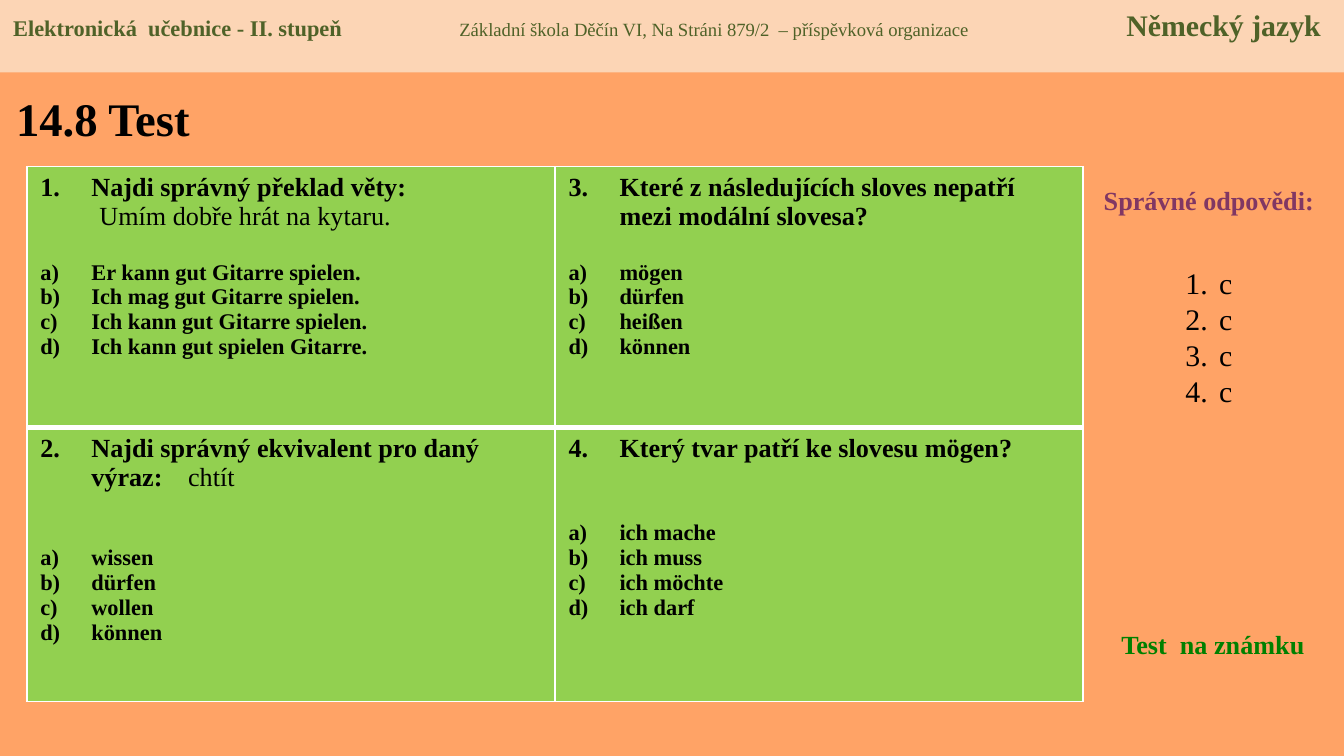
import dataclasses
import typing

import lxml.etree
import pptx
import pptx.dml.color
import pptx.enum.shapes
import pptx.enum.text
import pptx.oxml.ns
import pptx.util

Inches = pptx.util.Inches
Align = pptx.enum.text.PP_ALIGN
Anchor = pptx.enum.text.MSO_ANCHOR


@dataclasses.dataclass(frozen=True)
class Theme:
    font: str = "Times New Roman"
    background: str = "FFA366"
    band: str = "FCD5B5"
    band_text: str = "4F6228"
    cell: str = "92D050"
    border: str = "FFFFFF"
    text: str = "000000"
    answers: str = "813763"
    graded: str = "008000"
    title_size: float = 25
    large: float = 16
    question: float = 14
    option: float = 12
    small: float = 10


@dataclasses.dataclass(frozen=True)
class Question:
    number: int
    prompt: str
    options: tuple[str, ...]
    gap: float  # points between prompt and options
    example: str = ""
    example_inline: bool = False


THEME = Theme()
INDENT = 0.38

# Table rows, read left to right
QUESTIONS = (
    (
        Question(1, "Najdi správný překlad věty:",
                 ("Er kann gut Gitarre spielen.", "Ich mag gut Gitarre spielen.",
                  "Ich kann gut Gitarre spielen.", "Ich kann gut spielen Gitarre."),
                 15.5, "Umím dobře hrát na kytaru."),
        Question(3, "Které z následujících sloves nepatří mezi modální slovesa?",
                 ("mögen", "dürfen", "heißen", "können"), 15.5),
    ),
    (
        Question(2, "Najdi správný ekvivalent pro daný výraz:",
                 ("wissen", "dürfen", "wollen", "können"), 29, "chtít", True),
        Question(4, "Který tvar patří ke slovesu mögen?",
                 ("ich mache", "ich muss", "ich möchte", "ich darf"), 31),
    ),
)


def rgb(color: str) -> pptx.dml.color.RGBColor:
    return pptx.dml.color.RGBColor.from_string(color)


def add_xml(parent: typing.Any, tag: str, **attributes: str) -> typing.Any:
    return lxml.etree.SubElement(parent, pptx.oxml.ns.qn(tag), **attributes)


def style(font: typing.Any, size: float, color: str = THEME.text, bold: bool = True) -> None:
    font.name = THEME.font
    font.size = pptx.util.Pt(size)
    font.bold = bold
    font.color.rgb = rgb(color)


def add_run(p: typing.Any, text: str, size: float, color: str, bold: bool) -> None:
    r = p.add_run()
    r.text = text
    style(r.font, size, color, bold)


def next_paragraph(tf: typing.Any) -> typing.Any:
    """Return the empty first paragraph, or a new one after the last."""
    p = tf.paragraphs[-1]
    return tf.add_paragraph() if p.runs else p


def indent(p: typing.Any, left: float, first: float = 0) -> None:
    pPr = p._p.get_or_add_pPr()
    pPr.set("marL", str(Inches(left)))
    pPr.set("indent", str(Inches(first)))


def number(p: typing.Any, kind: str, hang: float, start: int = 1) -> None:
    """Give automatic numbering; call before setting the paragraph font."""
    indent(p, hang, -hang)
    bullet = add_xml(p._p.get_or_add_pPr(), "a:buAutoNum", type=kind)
    if start > 1:
        bullet.set("startAt", str(start))


def add_tabs(p: typing.Any, *stops: tuple[float, str]) -> None:
    tabs = add_xml(p._p.get_or_add_pPr(), "a:tabLst")
    for position, side in stops:
        add_xml(tabs, "a:tab", pos=str(Inches(position)), algn=side)


def place(sp: typing.Any, left: float, top: float, width: float, height: float) -> None:
    sp.left, sp.top = Inches(left), Inches(top)
    sp.width, sp.height = Inches(width), Inches(height)


def add_label(slide: typing.Any, text: str, box: tuple[float, ...], color: str) -> None:
    sp = slide.shapes.add_textbox(*map(Inches, box))
    tf = sp.text_frame
    tf.word_wrap = True
    p = tf.paragraphs[0]
    p.text = text
    p.alignment = Align.CENTER
    style(p.font, THEME.question, color)


def set_borders(cell: typing.Any, top: float, bottom: float) -> None:
    """Draw all four edges; call before filling the cell."""
    tcPr = cell._tc.get_or_add_tcPr()
    for side, width in (("L", 1), ("R", 1), ("T", top), ("B", bottom)):
        ln = add_xml(tcPr, "a:ln" + side, w=str(pptx.util.Pt(width)))
        add_xml(add_xml(ln, "a:solidFill"), "a:srgbClr", val=THEME.border)


def fill_cell(cell: typing.Any, question: Question) -> None:
    cell.fill.solid()
    cell.fill.fore_color.rgb = rgb(THEME.cell)
    tf = cell.text_frame
    p = tf.paragraphs[0]
    number(p, "arabicPeriod", INDENT, question.number)
    if question.example_inline:
        add_tabs(p, (1.1, "l"))
        add_run(p, question.prompt + "\t", THEME.question, THEME.text, True)
        add_run(p, question.example, THEME.question, THEME.text, False)
    else:
        p.text = question.prompt
        style(p.font, THEME.question)
        if question.example:
            p = next_paragraph(tf)
            p.text = question.example
            indent(p, 0.44)
            style(p.font, THEME.question, bold=False)
    for i, option in enumerate(question.options):
        p = next_paragraph(tf)
        p.text = option
        number(p, "alphaLcParenR", INDENT)
        p.space_before = pptx.util.Pt(0 if i else question.gap)
        style(p.font, THEME.option)


def add_questions(slide: typing.Any) -> None:
    table = slide.shapes.add_table(
        2, 2, Inches(0.2), Inches(1.24), Inches(7.86), Inches(3.98)).table
    table.horz_banding = False
    edges = ((1, 3), (3, 1))
    for row, height, edge, questions in zip(table.rows, (1.94, 2.04), edges, QUESTIONS):
        row.height = Inches(height)
        for cell, question in zip(row.cells, questions):
            set_borders(cell, *edge)
            fill_cell(cell, question)


def add_header(slide: typing.Any) -> None:
    sp = slide.shapes.add_shape(pptx.enum.shapes.MSO_SHAPE.RECTANGLE,
                                0, 0, Inches(10), Inches(0.54))
    sp.shadow.inherit = False
    sp.fill.solid()
    sp.fill.fore_color.rgb = rgb(THEME.band)
    sp.line.fill.background()
    tf = sp.text_frame
    tf.vertical_anchor = Anchor.TOP
    p = tf.paragraphs[0]
    p.alignment = Align.LEFT
    add_tabs(p, (3.32, "l"), (9.73, "r"))
    for text, size, bold in (
        ("Elektronická  učebnice - II. stupeň\t", THEME.option, True),
        ("Základní škola Děčín VI, Na Stráni 879/2  – příspěvková organizace\t",
         THEME.small, False),
        ("Německý jazyk", THEME.large, True),
    ):
        add_run(p, text, size, THEME.band_text, bold)


def main() -> None:
    prs = pptx.Presentation()
    prs.slide_width = Inches(10)
    prs.slide_height = prs.slide_width * 9 // 16
    slide = prs.slides.add_slide(prs.slide_layouts[1])
    slide.background.fill.solid()
    slide.background.fill.fore_color.rgb = rgb(THEME.background)

    title, answers = slide.placeholders
    place(title, 0.02, 0.55, 3.19, 0.65)
    title.text_frame.vertical_anchor = Anchor.MIDDLE
    p = title.text_frame.paragraphs[0]
    p.text = "14.8 Test"
    p.alignment = Align.LEFT
    style(p.font, THEME.title_size)

    place(answers, 8.72, 1.92, 0.55, 1.72)
    answers.text_frame.auto_size = pptx.enum.text.MSO_AUTO_SIZE.NONE
    for answer in "cccc":
        p = next_paragraph(answers.text_frame)
        p.text = answer
        number(p, "arabicPeriod", 0.25)
        p.space_before = pptx.util.Pt(0)
        style(p.font, THEME.large, bold=False)

    add_label(slide, "Správné odpovědi:", (8.05, 1.32, 1.89, 0.34), THEME.answers)
    add_label(slide, "Test  na známku", (8.24, 4.63, 1.57, 0.34), THEME.graded)
    add_questions(slide)
    add_header(slide)
    prs.save("out.pptx")


if __name__ == "__main__":
    main()
